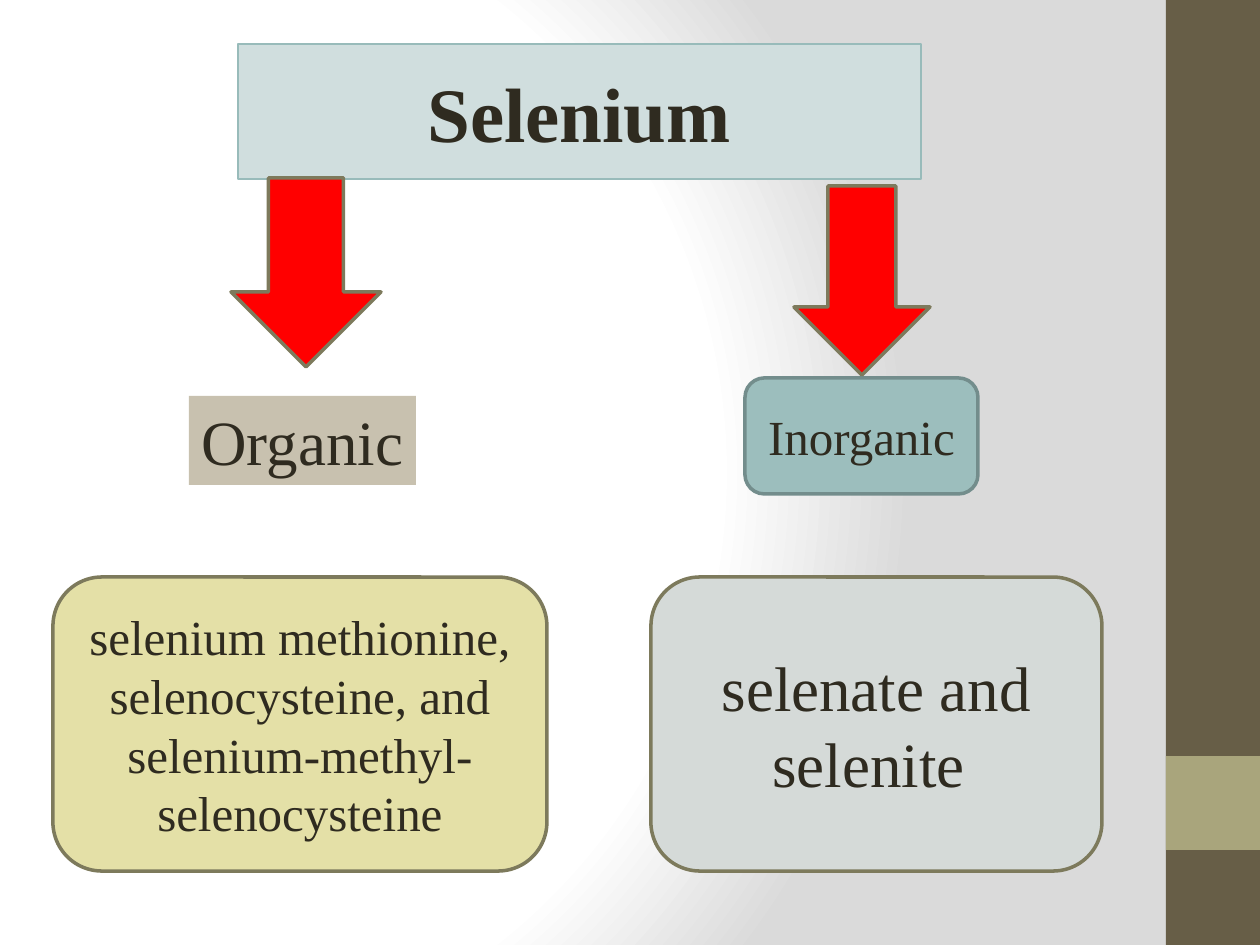
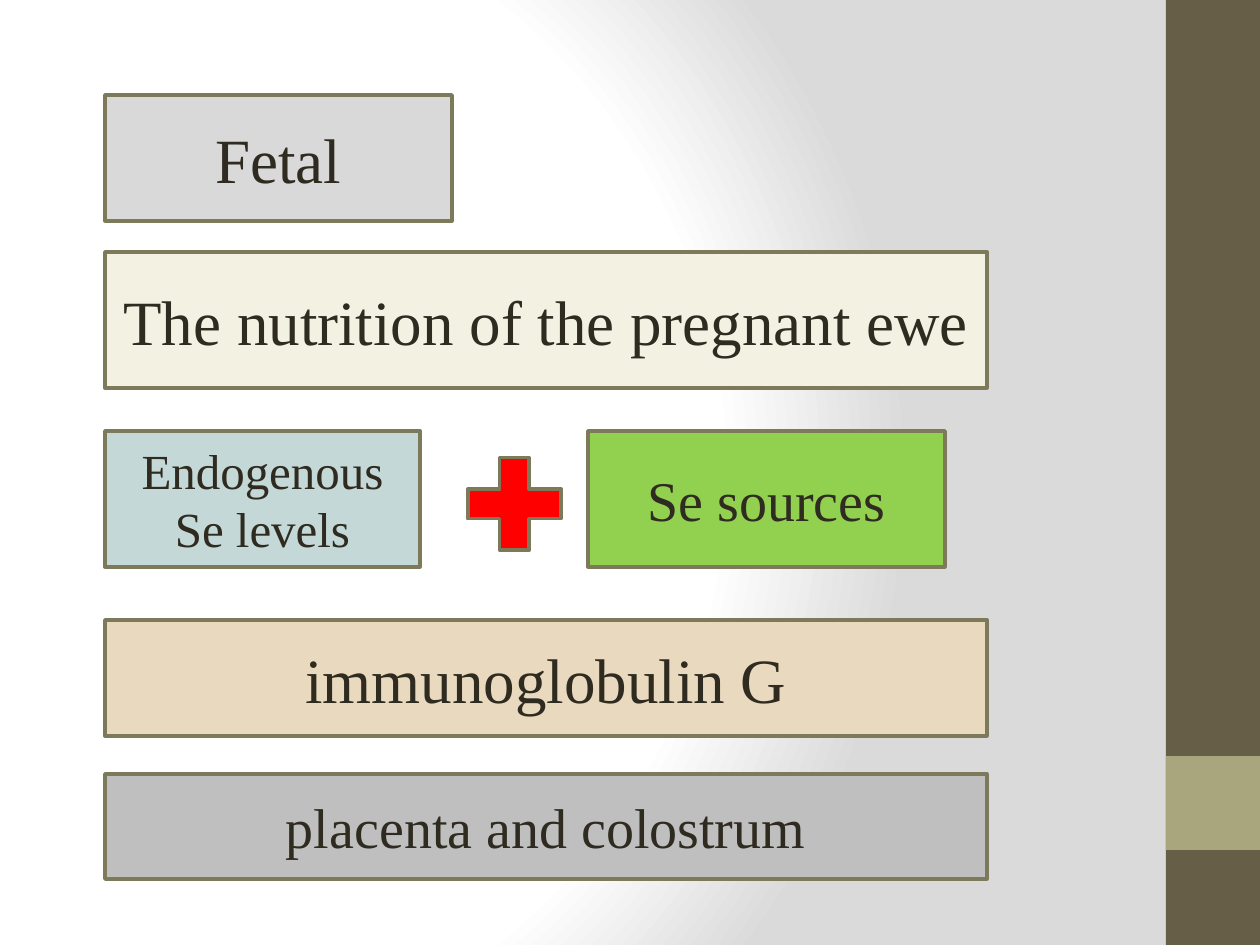
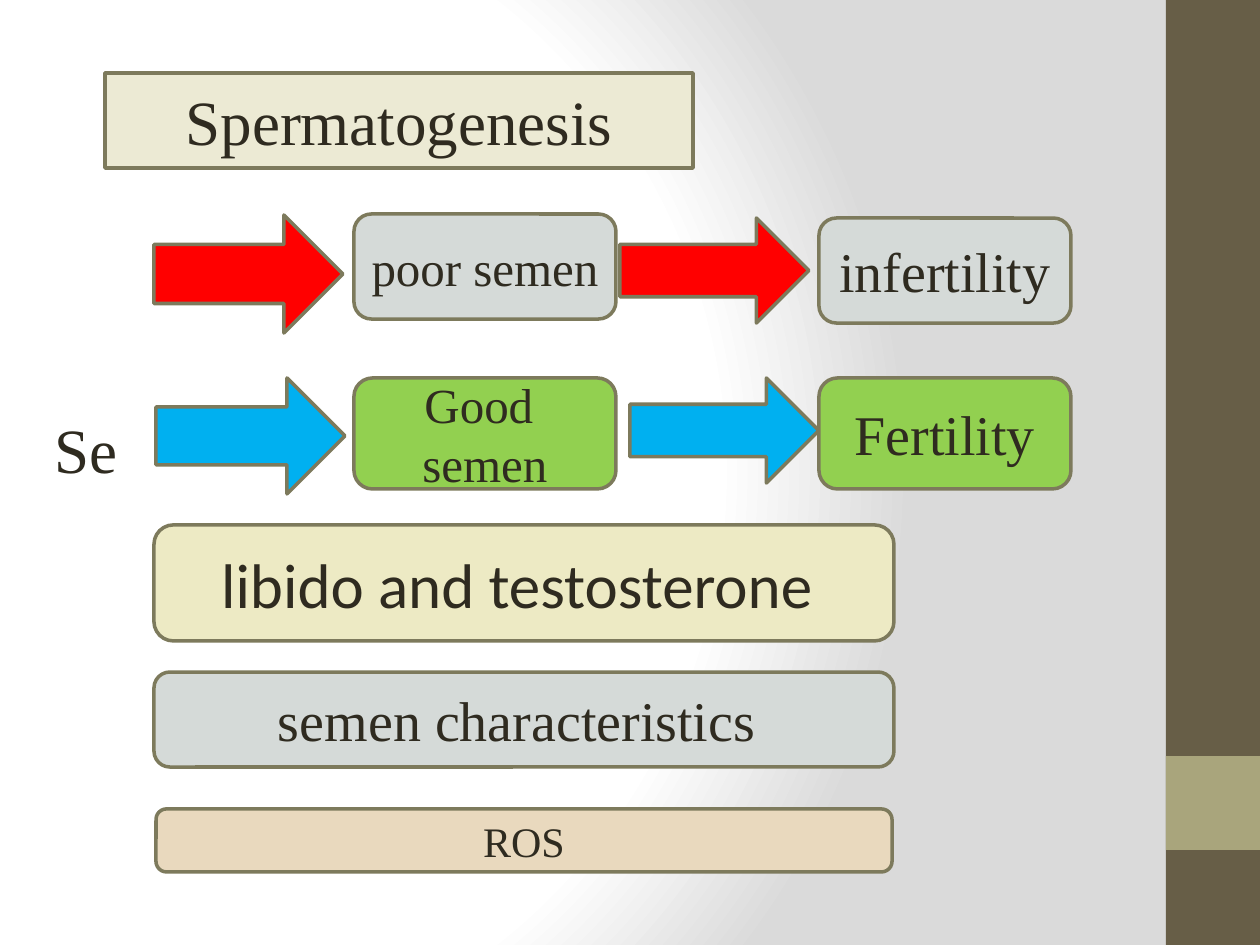
from lxml import etree
from pptx import Presentation
from pptx.dml.color import RGBColor as Rgb
from pptx.enum.shapes import MSO_SHAPE as Kind
from pptx.enum.text import MSO_ANCHOR as Anchor, MSO_AUTO_SIZE as Auto, PP_ALIGN as Align
from pptx.oxml.ns import qn
from pptx.util import Inches, Pt

WIDE, HIGH = 1260, 945
SCALE = Inches(10) / WIDE
FONT = "Times New Roman"
HUE = {
    "white": "FFFFFF", "mist": "DADADA", "bark": "675E47", "moss": "A9A57C",
    "ink": "2F2B20", "edge": "7D7A5C", "red": "FF0000", "blue": "00B0F0",
    "green": "92D050", "pale": "D0DEDE", "aqua": "98BBBA", "teal": "9CBEBD",
    "deep": "738D8C", "stone": "C8C1AF", "straw": "E4E0A7", "fog": "D5DAD8",
    "ash": "D9D9D9", "cream": "F2F1E2", "ice": "C4D8D7", "sand": "E9D9BE",
    "grey": "BFBFBF", "ivory": "ECEAD4", "lemon": "EDEAC4",
}


def px(n):
    return round(n * SCALE)


def rgb(name):
    return Rgb.from_string(HUE[name])


def write(shape, text, size=36, font=FONT, bold=False, align=Align.CENTER,
          anchor=Anchor.MIDDLE, wrap=True, grow=False):
    frame = shape.text_frame
    frame.word_wrap = wrap
    frame.auto_size = Auto.SHAPE_TO_FIT_TEXT if grow else Auto.NONE
    frame.vertical_anchor = anchor
    frame.text = text
    for para in frame.paragraphs:
        para.alignment = align
        for run in para.runs:
            run.font.name = font
            run.font.size = Pt(size)
            run.font.bold = bold
            run.font.color.rgb = rgb("ink")


def draw(slide, kind, area, fill, line="edge", weight=2):
    shape = slide.shapes.add_shape(kind, *map(px, area))
    shape.shadow.inherit = False
    shape.fill.solid()
    shape.fill.fore_color.rgb = rgb(fill)
    if line:
        shape.line.color.rgb = rgb(line)
        shape.line.width = Pt(weight)
    else:
        shape.line.fill.background()
    return shape


def box(slide, area, fill, text, line="edge", weight=2, kind=Kind.RECTANGLE, **form):
    write(draw(slide, kind, area, fill, line, weight), text, **form)


def pill(slide, area, fill, text, **form):
    box(slide, area, fill, text, kind=Kind.ROUNDED_RECTANGLE, **form)


def label(slide, area, text, **form):
    write(slide.shapes.add_textbox(*map(px, area)), text, **form)


def glow(slide):
    """Fill the background with a circular fade from white to grey."""
    fill = slide.background.fill
    fill.gradient()
    grad = slide.background._cSld.find(".//" + qn("a:gradFill"))
    for child in list(grad):
        grad.remove(child)
    stops = etree.SubElement(grad, qn("a:gsLst"))
    for pos, name in ((0, "white"), (75, "white"), (100, "mist")):
        stop = etree.SubElement(stops, qn("a:gs"), pos=str(pos * 1000))
        etree.SubElement(stop, qn("a:srgbClr"), val=HUE[name])
    shade = etree.SubElement(grad, qn("a:path"), {"path": "circle"})
    etree.SubElement(shade, qn("a:fillToRect"), l="20000", t="50000", r="100000", b="50000")


def start(deck):
    """Add a slide with the shared background and side bands."""
    slide = deck.slides.add_slide(deck.slide_layouts[6])
    glow(slide)
    band = WIDE - 1166
    draw(slide, Kind.RECTANGLE, (1166, 0, band, HIGH), "bark", None)
    draw(slide, Kind.RECTANGLE, (1166, 756, band, band), "moss", None)
    return slide


def forms(deck):
    slide = start(deck)
    box(slide, (238, 44, 683, 135), "pale", "Selenium", line="aqua", weight=1,
        size=44, bold=True)
    draw(slide, Kind.DOWN_ARROW, (231, 178, 150, 189), "red")
    pill(slide, (745, 378, 233, 116), "teal", "Inorganic", line="deep", size=28)
    draw(slide, Kind.DOWN_ARROW, (794, 186, 136, 189), "red")
    box(slide, (189, 396, 227, 89), "stone", "Organic", line=None,
        align=Align.LEFT, anchor=Anchor.TOP, wrap=False, grow=True)
    top, high = 577, 294
    pill(slide, (53, top, 494, high), "straw",
         "selenium methionine, selenocysteine, and selenium-methyl-selenocysteine", size=28)
    pill(slide, (651, top, 451, high), "fog", "selenate and selenite ")


def fetal(deck):
    slide = start(deck)
    left, full = 105, 882
    box(slide, (left, 95, 347, 126), "ash", "Fetal")
    box(slide, (left, 252, full, 136), "cream", "The nutrition of the pregnant ewe")
    box(slide, (left, 431, 315, 136), "ice", "Endogenous Se levels", size=28)
    box(slide, (588, 431, 357, 136), "green", "Se sources", size=32)
    draw(slide, Kind.MATH_PLUS, (451, 441, 127, 126), "red")
    box(slide, (left, 620, full, 116), "sand", "immunoglobulin G")
    box(slide, (left, 774, full, 105), "grey", "placenta and colostrum", size=32)


def sperm(deck):
    slide = start(deck)
    box(slide, (105, 73, 588, 95), "ivory", "Spermatogenesis")
    for left, top, high, fill in ((156, 378, 116, "blue"), (154, 215, 118, "red"),
                                  (620, 218, 105, "red"), (630, 378, 105, "blue")):
        draw(slide, Kind.RIGHT_ARROW, (left, top, 189, high), fill)
    label(slide, (42, 404, 89, 89), "Se", anchor=Anchor.TOP, wrap=False, grow=True)
    pill(slide, (354, 214, 262, 105), "fog", "poor semen ", size=28)
    pill(slide, (819, 218, 252, 105), "fog", "infertility", size=32)
    pill(slide, (354, 378, 262, 111), "green", "Good \nsemen", size=28)
    pill(slide, (819, 378, 252, 111), "green", "Fertility", size=32)
    pill(slide, (154, 525, 740, 116), "lemon", "libido and testosterone ", font="Calibri")
    pill(slide, (154, 672, 740, 95), "fog", "semen characteristics ", size=32)
    pill(slide, (156, 809, 736, 63), "sand", "ROS", size=24)


def main():
    deck = Presentation()
    deck.slide_width, deck.slide_height = px(WIDE), px(HIGH)
    for build in (forms, fetal, sperm):
        build(deck)
    deck.save("out.pptx")


if __name__ == "__main__":
    main()
